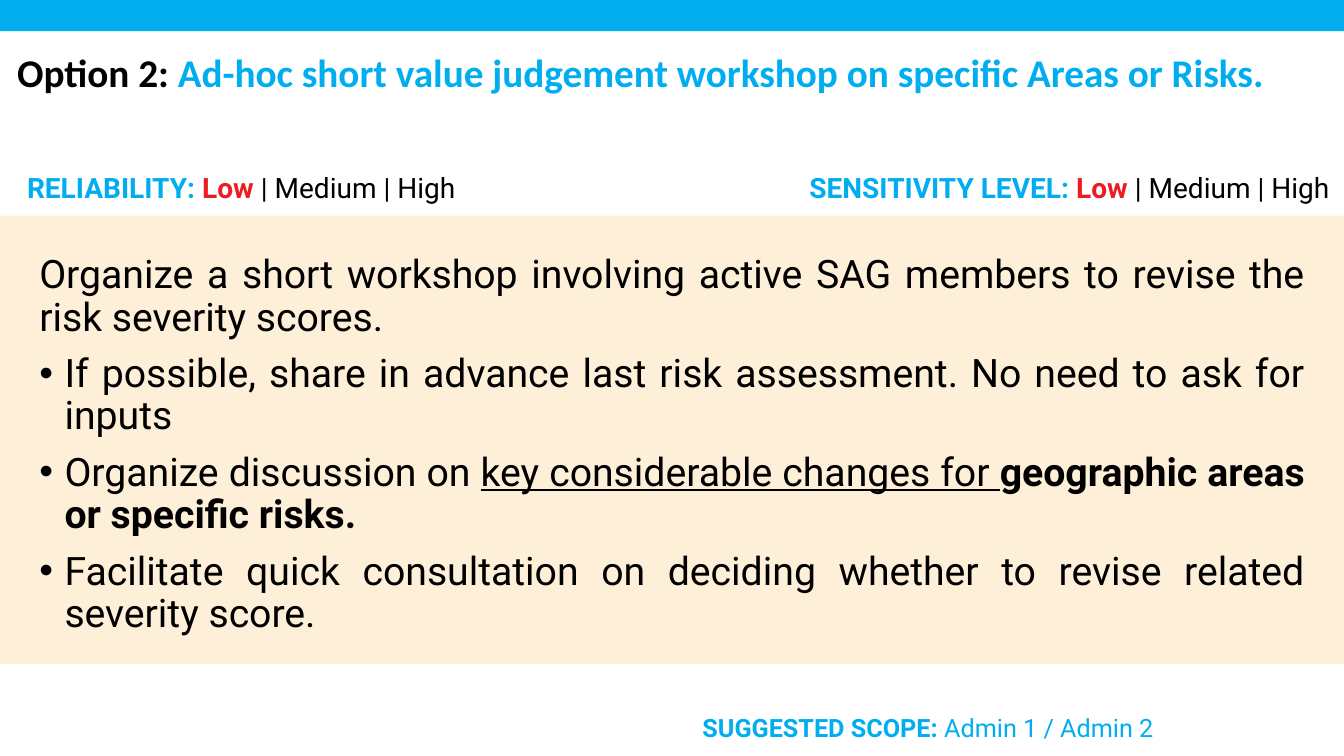
from pptx import Presentation
from pptx.dml.color import RGBColor
from pptx.enum.shapes import MSO_SHAPE
from pptx.enum.text import MSO_ANCHOR, MSO_AUTO_SIZE, PP_ALIGN
from pptx.oxml.ns import qn
from pptx.util import Inches, Pt
from lxml import etree

BLUE, RED, BLACK, CREAM = "00AEEF", "ED1C24", "000000", "FEEFD9"
WIDTH, HEIGHT = 13.33, 7.5
DEFAULT_INSETS = (0.1, 0.05, 0.1, 0.05)

TITLE = [
    ("Option 2: ", {"bold": True}),
    ("Ad-hoc short value judgement workshop on specific Areas or Risks.", {"bold": True, "color": BLUE}),
]
RATINGS = [
    ("RELIABILITY: ", (0.17, 1.64, 4.63, 0.44)),
    ("SENSITIVITY LEVEL: ", (7.93, 1.64, 5.4, 0.44)),
]
RATING_SCALE = [("Low", {"bold": True, "color": RED}), (" | Medium | High", {})]
INTRO = [("Organize a short workshop involving active SAG members to revise the risk severity scores.", {})]
STEPS = [
    [("If possible, share in advance last risk assessment. No need to ask for inputs", {})],
    [
        ("Organize discussion on ", {}),
        ("key considerable changes for ", {"underline": True}),
        ("geographic areas or specific risks. ", {"bold": True}),
    ],
    [("Facilitate quick consultation on deciding whether to revise related severity score.", {})],
]
SCOPE = [("SUGGESTED SCOPE: ", {"bold": True}), ("Admin 1 / Admin 2", {})]


def rgb(value):
    return RGBColor.from_string(value)


def place(shape, left, top, width, height):
    shape.left, shape.top = Inches(left), Inches(top)
    shape.width, shape.height = Inches(width), Inches(height)


def set_frame(frame, insets=DEFAULT_INSETS):
    frame.word_wrap = True
    frame.auto_size = MSO_AUTO_SIZE.NONE
    frame.vertical_anchor = MSO_ANCHOR.TOP
    frame.margin_left, frame.margin_top, frame.margin_right, frame.margin_bottom = map(Inches, insets)


def write(paragraph, parts, size, font="Roboto", color=BLACK, align=PP_ALIGN.LEFT):
    paragraph.alignment = align
    for text, style in parts:
        run = paragraph.add_run()
        run.text = text
        run.font.name = font
        run.font.size = Pt(size)
        run.font.bold = style.get("bold", False)
        run.font.underline = style.get("underline", False)
        run.font.color.rgb = rgb(style.get("color", color))


def set_bullet(paragraph, bulleted):
    properties = paragraph._p.get_or_add_pPr()
    indent = Inches(0.25) if bulleted else 0
    properties.set("marL", str(indent))
    properties.set("indent", str(-indent))
    if bulleted:
        etree.SubElement(properties, qn("a:buFont")).set("typeface", "Arial")
        etree.SubElement(properties, qn("a:buChar")).set("char", "•")
    else:
        etree.SubElement(properties, qn("a:buNone"))


def add_label(slide, box, parts, **style):
    label = slide.shapes.add_textbox(*map(Inches, box))
    set_frame(label.text_frame)
    write(label.text_frame.paragraphs[0], parts, **style)


def main():
    deck = Presentation()
    deck.slide_width, deck.slide_height = Inches(WIDTH), Inches(HEIGHT)
    slide = deck.slides.add_slide(deck.slide_layouts[1])
    title, body = slide.placeholders

    place(body, 0, 2.14, WIDTH, 4.45)
    body.fill.solid()
    body.fill.fore_color.rgb = rgb(CREAM)
    set_frame(body.text_frame, (0.39, 0.39, 0.39, 0.05))
    for index, parts in enumerate([INTRO, *STEPS]):
        paragraph = body.text_frame.add_paragraph() if index else body.text_frame.paragraphs[0]
        set_bullet(paragraph, bulleted=index > 0)
        paragraph.line_spacing = 0.9
        paragraph.space_before = Pt(10 if index else 0)
        write(paragraph, parts, size=28, align=PP_ALIGN.JUSTIFY)

    banner = slide.shapes.add_shape(MSO_SHAPE.RECTANGLE, 0, 0, Inches(WIDTH), Inches(0.31))
    banner.shadow.inherit = False
    banner.fill.solid()
    banner.fill.fore_color.rgb = rgb(BLUE)
    banner.line.fill.background()

    place(title, 0.17, 0.43, 12.79, 0.57)
    set_frame(title.text_frame, (0, 0.05, 0.1, 0.05))
    write(title.text_frame.paragraphs[0], TITLE, size=28, font="Calibri")

    for heading, box in RATINGS:
        add_label(slide, box, [(heading, {"bold": True, "color": BLUE}), *RATING_SCALE], size=20)
    add_label(slide, (6.56, 7.02, 4.98, 0.4), SCOPE, size=18, color=BLUE, align=PP_ALIGN.RIGHT)

    deck.save("out.pptx")


if __name__ == "__main__":
    main()
